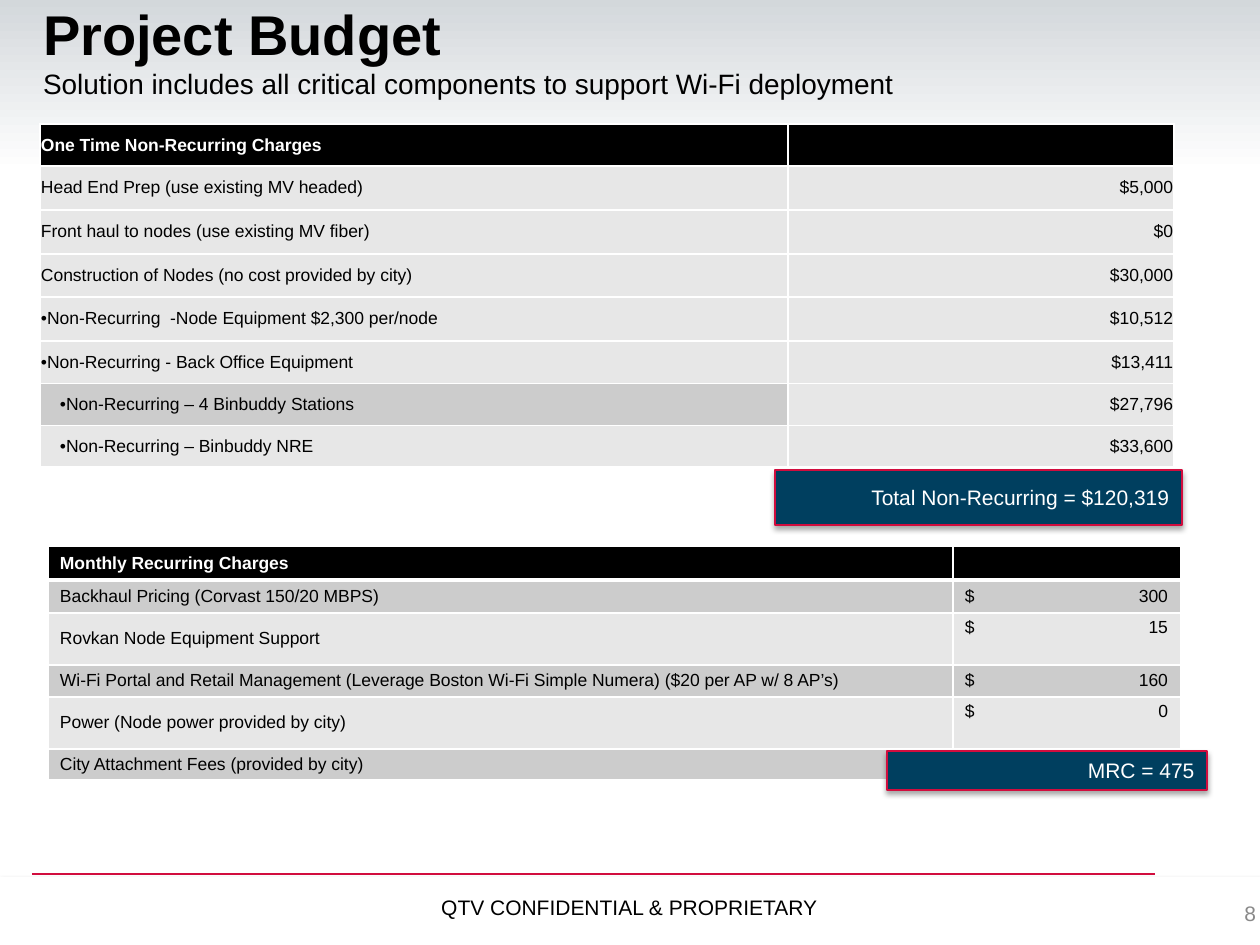
"""Build the project budget slide with its two charge tables and totals."""
from lxml import etree
from pptx import Presentation
from pptx import util as u
from pptx.dml.color import RGBColor
from pptx.enum import shapes, text
from pptx.oxml import parse_xml
from pptx.oxml.ns import nsdecls, qn

COLORS = {
    "white": "FFFFFF", "black": "000000", "mist": "CFD4D8", "light": "E7E7E7",
    "gray": "CCCCCC", "number": "898989", "navy": "003F5F", "red": "D10D3E",
}
RGB = {name: RGBColor.from_string(value) for name, value in COLORS.items()}
LEFT, CENTER, RIGHT = text.PP_ALIGN.LEFT, text.PP_ALIGN.CENTER, text.PP_ALIGN.RIGHT
TOP, MIDDLE, BOTTOM = text.MSO_ANCHOR.TOP, text.MSO_ANCHOR.MIDDLE, text.MSO_ANCHOR.BOTTOM


def px(length):
    return u.Emu(round(length * 914400 / 126))


def write(paragraph, words, size=10, color="black", bold=False, align=LEFT, tab=None):
    if tab:
        stops = etree.SubElement(paragraph._p.get_or_add_pPr(), qn("a:tabLst"))
        etree.SubElement(stops, qn("a:tab"), pos=str(px(tab)), algn="r")
    paragraph.alignment = align
    if not words:
        etree.SubElement(paragraph._p, qn("a:endParaRPr"), sz=str(size * 100))
        return
    run = paragraph.add_run()
    run.text = words
    run.font.name = "Arial"
    run.font.size = u.Pt(size)
    run.font.bold = bold
    run.font.color.rgb = RGB[color]


prs = Presentation()
prs.slide_width, prs.slide_height = px(1260), px(945)
slide = prs.slides.add_slide(prs.slide_layouts[6])

backdrop = slide.shapes.add_shape(
    shapes.MSO_SHAPE.RECTANGLE, px(0), px(-16), px(1260), px(942))
backdrop.shadow.inherit = False
backdrop.line.fill.background()
backdrop.fill.gradient()
backdrop.fill.gradient_angle = 90
for stop, (position, color) in zip(backdrop.fill.gradient_stops,
                                   [(0.8, "white"), (1, "mist")]):
    stop.position = position
    stop.color.rgb = RGB[color]

footer_rule = slide.shapes.add_connector(
    shapes.MSO_CONNECTOR.STRAIGHT, px(32), px(874), px(1155), px(874))
footer_rule.line.color.rgb = RGB["red"]
footer_rule.line.width = u.Pt(0.75)
etree.SubElement(footer_rule._element.spPr, qn("a:effectLst"))

one_time = [
    ("One Time Non-Recurring Charges", "", 42, "black"),
    ("Head End Prep (use existing MV headed)", "$5,000", 44, "light"),
    ("Front haul to nodes (use existing MV fiber)", "$0", 44, "light"),
    ("Construction of Nodes (no cost provided by city)", "$30,000", 43, "light"),
    ("•Non-Recurring  -Node Equipment $2,300 per/node", "$10,512", 44, "light"),
    ("•Non-Recurring - Back Office Equipment", "$13,411", 43, "light"),
    ("•Non-Recurring – 4 Binbuddy Stations", "$27,796", 42, "gray"),
    ("•Non-Recurring – Binbuddy NRE", "$33,600", 41, "light"),
]
monthly = [
    ("Monthly Recurring Charges", "", 34, "black"),
    ("Backhaul Pricing (Corvast 150/20 MBPS)", "$\t300", 33, "gray"),
    ("Rovkan Node Equipment Support", "$\t15", 52, "light"),
    ("Wi-Fi Portal and Retail Management (Leverage Boston Wi-Fi Simple Numera)"
     " ($20 per AP w/ 8 AP’s)", "$\t160", 32, "gray"),
    ("Power (Node power provided by city)", "$\t0", 52, "light"),
    ("City Attachment Fees (provided by city)", "", 31, "gray"),
]
tables = [
    (one_time, 40, 124, (748, 386), 1, 1),
    (monthly, 48, 546, (905, 228), 12, 3),
]
for charges, left, top, widths, inset, header_rule in tables:
    grid = slide.shapes.add_table(
        len(charges), 2, px(left), px(top), px(sum(widths)),
        px(sum(charge[2] for charge in charges))).table
    for column, width in zip(grid.columns, widths):
        column.width = px(width)
    for r, (label, amount, height, shade) in enumerate(charges):
        grid.rows[r].height = px(height)
        for c, words in enumerate((label, amount)):
            cell = grid.cell(r, c)
            indented = charges is one_time and r > 5 and c == 0
            cell.margin_left = px(20 if indented else inset)
            cell.margin_right = px(inset)
            cell.margin_top = cell.margin_bottom = px(1)
            cell.vertical_anchor = MIDDLE
            if c and height > 50:
                cell.vertical_anchor = TOP
                cell.margin_top = px(5)
            for side in "LRTB":
                heavy = (r, side) in [(0, "B"), (1, "T")]
                points = header_rule if heavy else 1
                cell._tc.get_or_add_tcPr().append(parse_xml(
                    f'<a:ln{side} {nsdecls("a")} w="{u.Pt(points)}"><a:solidFill>'
                    f'<a:srgbClr val="{COLORS["white"]}"/></a:solidFill></a:ln{side}>'))
            cell.fill.solid()
            cell.fill.fore_color.rgb = RGB["light" if c and charges is one_time and r else shade]
            tabbed = "\t" in words
            write(cell.text_frame.paragraphs[0], words,
                  color="black" if r else "white", bold=r == 0,
                  align=RIGHT if c and not tabbed else LEFT,
                  tab=203 if tabbed else None)

panels = [
    ("", (0, 877, 1260, 68), "white", None),
    ("MRC = 475", (887, 751, 320, 39), "navy", "red"),
    ("Total Non-Recurring = $120,319", (775, 470, 407, 55), "navy", "red"),
]
for words, place, fill, outline in panels:
    panel = slide.shapes.add_shape(shapes.MSO_SHAPE.RECTANGLE, *map(px, place))
    panel.fill.solid()
    panel.fill.fore_color.rgb = RGB[fill]
    if outline:
        panel.line.color.rgb = RGB[outline]
        panel.line.width = u.Pt(0.75)
    else:
        panel.line.fill.background()
    panel.shadow.inherit = False
    panel._element.spPr.find(qn("a:effectLst")).append(parse_xml(
        f'<a:outerShdw {nsdecls("a")} blurRad="{u.Pt(3.1)}" dist="{u.Pt(1.8)}" dir="5400000">'
        f'<a:srgbClr val="{COLORS["black"]}"><a:alpha val="35000"/></a:srgbClr></a:outerShdw>'))
    if words:
        panel.text_frame.vertical_anchor = MIDDLE
        panel.text_frame.word_wrap = True
        write(panel.text_frame.paragraphs[0], words, size=12, color="white", align=RIGHT)

captions = [
    ((229, 861, 801, 65), BOTTOM, 12, 6,
     [("QTV CONFIDENTIAL & PROPRIETARY", dict(size=12, align=CENTER))]),
    ((963, 861, 293, 65), BOTTOM, 0, 0,
     [("8", dict(size=12, color="number", align=RIGHT))]),
    ((30, -23, 1239, 146), MIDDLE, 13, 6,
     [("Project Budget", dict(size=32, bold=True)),
      ("Solution includes all critical components to support Wi-Fi deployment",
       dict(size=16))]),
]
for place, anchor, side, edge, lines in captions:
    frame = slide.shapes.add_textbox(*map(px, place)).text_frame
    frame.word_wrap = True
    frame.vertical_anchor = anchor
    frame.margin_left = frame.margin_right = px(side)
    frame.margin_top = frame.margin_bottom = px(edge)
    for i, (words, style) in enumerate(lines):
        write(frame.add_paragraph() if i else frame.paragraphs[0], words, **style)

prs.save("out.pptx")
